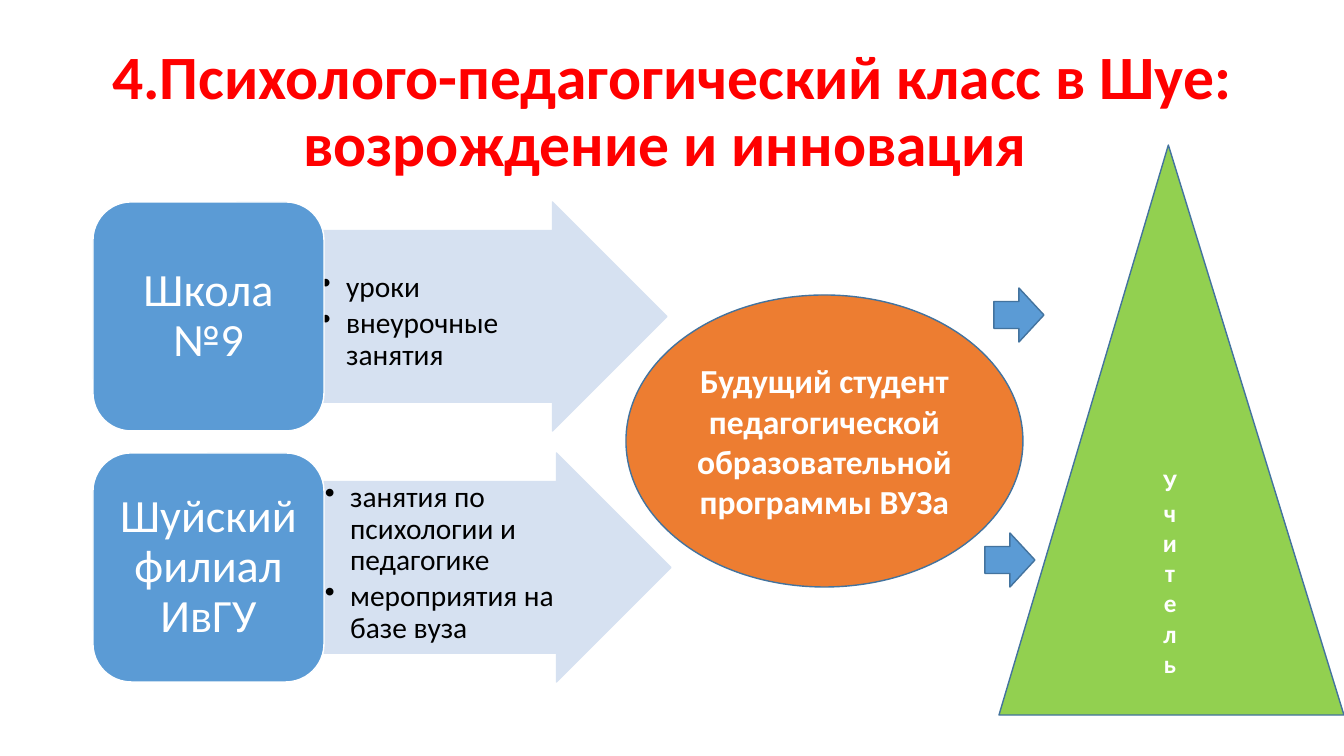
from dataclasses import dataclass

from lxml import etree
from pptx import Presentation
from pptx import util as u
from pptx.dml.color import RGBColor
from pptx.enum import shapes, text
from pptx.oxml.ns import qn

TITLE = "4.Психолого-педагогический класс в Шуе: возрождение и инновация "
# partner, activities, top of partner box, left of arrow, top of activities
PARTNERS = [
    ("Школа №9", ["уроки", "внеурочные занятия"], 202, 320, 271),
    ("Шуйский филиал ИвГУ",
     ["занятия по психологии и педагогике", "мероприятия на базе вуза"],
     453, 324, 481),
]
STUDENT = "Будущий студент педагогической образовательной программы ВУЗа"
TEACHER = "Учитель"
STEP_ARROWS = [(994, 288), (985, 533)]


@dataclass(frozen=True)
class Theme:
    font: str = "Calibri"
    red: str = "FF0000"
    white: str = "FFFFFF"
    black: str = "000000"
    blue: str = "5B9BD5"
    pale: str = "D6E1F1"
    orange: str = "ED7D31"
    green: str = "92D050"
    outline: str = "43739E"
    title: int = 44
    partner: int = 33
    student: int = 24
    activity: int = 21
    teacher: int = 18


THEME = Theme()
PX = 914400 / 100.8
SHAPE = shapes.MSO_SHAPE


def px(*lengths):
    return [u.Emu(round(length * PX)) for length in lengths]


def write(shape, lines, size, color=THEME.white, bold=False, bullet=False,
          align=text.PP_ALIGN.CENTER, anchor=text.MSO_ANCHOR.MIDDLE,
          spacing=1.0, after=0, margins=(10, 5)):
    frame = shape.text_frame
    frame.word_wrap = True
    frame.auto_size = text.MSO_AUTO_SIZE.NONE
    frame.vertical_anchor = anchor
    frame.margin_left, frame.margin_top = px(*margins)
    frame.margin_right, frame.margin_bottom = px(*margins)
    for index, line in enumerate(lines):
        paragraph = frame.paragraphs[0] if index == 0 else frame.add_paragraph()
        paragraph.alignment = align
        paragraph.line_spacing = spacing
        paragraph.space_before = u.Pt(0)
        paragraph.space_after = u.Pt(after)
        run = paragraph.add_run()
        run.text = line
        run.font.name = THEME.font
        run.font.size = u.Pt(size)
        run.font.bold = bold
        run.font.color.rgb = RGBColor.from_string(color)
        if bullet:
            properties = paragraph._p.get_or_add_pPr()
            indent = u.Inches(0.25)
            properties.set("marL", str(indent))
            properties.set("indent", str(-indent))
            etree.SubElement(properties, qn("a:buChar")).set("char", "•")


def add_shape(slide, kind, box, fill, line=THEME.outline, adjustments=()):
    shape = slide.shapes.add_shape(kind, *px(*box))
    shape.shadow.inherit = False
    shape.fill.solid()
    shape.fill.fore_color.rgb = RGBColor.from_string(fill)
    shape.line.color.rgb = RGBColor.from_string(line)
    shape.line.width = u.Pt(1)
    for index, value in enumerate(adjustments):
        shape.adjustments[index] = value
    return shape


def add_partner(slide, partner, activities, top, arrow_left, activities_top):
    add_shape(slide, SHAPE.RIGHT_ARROW, (arrow_left, top, 347, 229),
              THEME.pale, THEME.pale, (0.75, 0.5))
    details = slide.shapes.add_textbox(
        *px(arrow_left, activities_top, 261, top + 200 - activities_top))
    write(details, activities, THEME.activity, THEME.black, bullet=True,
          align=text.PP_ALIGN.LEFT, anchor=text.MSO_ANCHOR.TOP,
          spacing=0.9, after=3, margins=(1, 1))
    card = add_shape(slide, SHAPE.ROUNDED_RECTANGLE, (93, top, 231, 229),
                     THEME.blue, THEME.white)
    write(card, [partner], THEME.partner, spacing=0.9, margins=(14, 7))


def main():
    deck = Presentation()
    deck.slide_width, deck.slide_height = px(1344, 756)
    slide = deck.slides.add_slide(deck.slide_layouts[5])

    heading = slide.shapes.title
    heading.left, heading.top, heading.width, heading.height = px(93, 40, 1159, 146)
    write(heading, [TITLE], THEME.title, THEME.red, bold=True, spacing=0.9)

    for partner in PARTNERS:
        add_partner(slide, *partner)

    student = add_shape(slide, SHAPE.OVAL, (626, 295, 397, 292), THEME.orange)
    write(student, [STUDENT], THEME.student, bold=True)

    teacher = add_shape(slide, SHAPE.ISOSCELES_TRIANGLE, (999, 145, 345, 570),
                        THEME.green, adjustments=(0.491,))
    write(teacher, [TEACHER], THEME.teacher, bold=True)
    teacher.text_frame._txBody.bodyPr.set("vert", "wordArtVert")

    for left, top in STEP_ARROWS:
        add_shape(slide, SHAPE.RIGHT_ARROW, (left, top, 50, 54), THEME.blue)

    deck.save("out.pptx")


if __name__ == "__main__":
    main()
